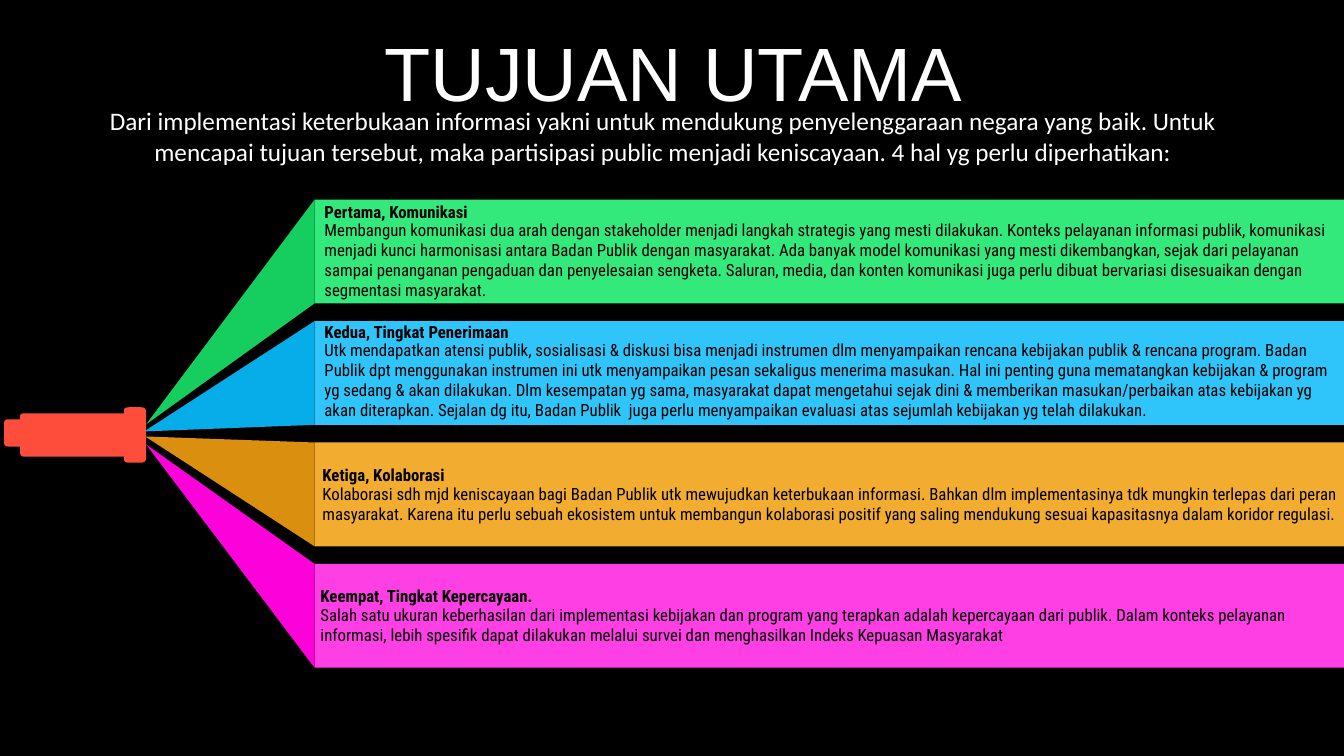
from math import dist

from pptx import Presentation
from pptx.dml.color import RGBColor as RGB
from pptx.enum.shapes import MSO_SHAPE as Shape
from pptx.enum.text import MSO_ANCHOR as Anchor, PP_ALIGN as Align
from pptx.util import Inches, Pt

HUES = {
    "black": "000000", "white": "FFFFFF", "torch": "FE4D3B",
    "green": "33E97C", "dark green": "16CD60",
    "blue": "2FC5FA", "dark blue": "06ADE8",
    "gold": "F2AC30", "dark gold": "DA900E",
    "pink": "FE3FE4", "dark pink": "FC01DA",
}
LEFT, TOP, HIGH, STEP = 3.12, 1.98, 1.03, 1.205

# hue, beam tip, text left, heading top, body top, body height, heading, body
GOALS = [
    ("green", (1.45, 4.21), 3.12, 1.95, 2.13, 0.91, "Pertama, Komunikasi",
     "Membangun komunikasi dua arah dengan stakeholder menjadi langkah strategis yang mesti "
     "dilakukan. Konteks pelayanan informasi publik, komunikasi menjadi kunci harmonisasi antara "
     "Badan Publik dengan masyarakat. Ada banyak model komunikasi yang mesti dikembangkan, sejak "
     "dari pelayanan sampai penanganan pengaduan dan penyelesaian sengketa. Saluran, media, dan "
     "konten komunikasi juga perlu dibuat bervariasi disesuaikan dengan segmentasi masyarakat."),
    ("blue", (1.43, 4.28), 3.12, 3.14, 3.32, 0.91, "Kedua, Tingkat Penerimaan",
     "Utk mendapatkan atensi publik, sosialisasi & diskusi bisa menjadi instrumen dlm "
     "menyampaikan rencana kebijakan publik & rencana program. Badan Publik dpt menggunakan "
     "instrumen ini utk menyampaikan pesan sekaligus menerima masukan. Hal ini penting guna "
     "mematangkan kebijakan & program yg sedang & akan dilakukan. Dlm kesempatan yg sama, "
     "masyarakat dapat mengetahui sejak dini & memberikan masukan/perbaikan atas kebijakan yg "
     "akan diterapkan. Sejalan dg itu, Badan Publik  juga perlu menyampaikan evaluasi atas "
     "sejumlah kebijakan yg telah dilakukan."),
    ("gold", (1.44, 4.33), 3.1, 4.56, 4.75, 0.5, "Ketiga, Kolaborasi",
     "Kolaborasi sdh mjd keniscayaan bagi Badan Publik utk mewujudkan keterbukaan informasi. "
     "Bahkan dlm implementasinya tdk mungkin terlepas dari peran masyarakat. Karena itu perlu "
     "sebuah ekosistem untuk membangun kolaborasi positif yang saling mendukung sesuai "
     "kapasitasnya dalam koridor regulasi."),
    ("pink", (1.45, 4.41), 3.08, 5.76, 5.95, 0.5, "Keempat, Tingkat Kepercayaan.",
     "Salah satu ukuran keberhasilan dari implementasi kebijakan dan program yang terapkan adalah "
     "kepercayaan dari publik. Dalam konteks pelayanan informasi, lebih spesifik dapat dilakukan "
     "melalui survei dan menghasilkan Indeks Kepuasan Masyarakat"),
]

# x, y, corner radius
TORCH = [
    (1.23, 4.04, 0.05), (1.45, 4.04, 0.05), (1.45, 4.59, 0.05), (1.23, 4.59, 0.05),
    (1.23, 4.53, 0), (0.2, 4.53, 0.04), (0.2, 4.43, 0), (0.04, 4.43, 0.04),
    (0.04, 4.16, 0.04), (0.2, 4.16, 0), (0.2, 4.1, 0.04), (1.23, 4.1, 0),
]


def smooth(nodes, steps=6):
    """Return outline points with each corner bent along a quadratic curve."""
    points = []
    for i, (x, y, r) in enumerate(nodes):
        if not r:
            points.append((x, y))
            continue
        ends = []
        for px, py, _ in (nodes[i - 1], nodes[(i + 1) % len(nodes)]):
            part = min(r / dist((x, y), (px, py)), 0.5)
            ends.append((x + (px - x) * part, y + (py - y) * part))
        (ax, ay), (bx, by) = ends
        for n in range(steps + 1):
            t = n / steps
            u = 1 - t
            points.append((u * u * ax + 2 * u * t * x + t * t * bx,
                           u * u * ay + 2 * u * t * y + t * t * by))
    return points


class Deck:
    def __init__(self):
        self.show = Presentation()
        self.show.slide_width, self.show.slide_height = Inches(13.33), Inches(7.5)
        self.slide = self.show.slides.add_slide(self.show.slide_layouts[5])
        self.paint(self.slide.background.fill, "black")

    def paint(self, fill, hue):
        fill.solid()
        fill.fore_color.rgb = RGB.from_string(HUES[hue])

    def plain(self, shape, hue):
        self.paint(shape.fill, hue)
        shape.line.fill.background()
        shape.shadow.inherit = False

    def words(self, frame, text, size, font, hue, bold=False, align=Align.LEFT):
        """Fill the first paragraph of the frame with one styled run."""
        frame.word_wrap = True
        para = frame.paragraphs[0]
        para.alignment = align
        run = para.add_run()
        run.text = text
        run.font.size, run.font.name, run.font.bold = Pt(size), font, bold
        run.font.color.rgb = RGB.from_string(HUES[hue])
        return para

    def title(self, box, text):
        head = self.slide.shapes.title
        head.left, head.top, head.width, head.height = map(Inches, box)
        head.text_frame.vertical_anchor = Anchor.MIDDLE
        para = self.words(head.text_frame, text, 54, "Arial", "white", align=Align.CENTER)
        para.line_spacing, para.space_before = 0.9, Pt(10)

    def text(self, box, *args, **style):
        area = self.slide.shapes.add_textbox(*map(Inches, box))
        self.words(area.text_frame, *args, **style)

    def band(self, box, hue):
        self.plain(self.slide.shapes.add_shape(Shape.RECTANGLE, *map(Inches, box)), hue)

    def outline(self, points, hue):
        first, *rest = [(Inches(x), Inches(y)) for x, y in points]
        pen = self.slide.shapes.build_freeform(*first)
        pen.add_line_segments(rest, close=True)
        self.plain(pen.convert_to_shape(), hue)


def main():
    deck = Deck()
    deck.title((0.35, 0.37, 12.66, 0.79), "TUJUAN UTAMA")
    deck.text((0.75, 1, 11.65, 0.71),
              "Dari implementasi keterbukaan informasi yakni untuk mendukung penyelenggaraan "
              "negara yang baik. Untuk mencapai tujuan tersebut, maka partisipasi public menjadi "
              "keniscayaan. 4 hal yg perlu diperhatikan:",
              18, "Calibri", "white", align=Align.CENTER)
    for i, (hue, tip, left, head, top, high, name, body) in enumerate(GOALS):
        y = TOP + i * STEP
        deck.band((LEFT, y, 13.33 - LEFT, HIGH), hue)
        deck.outline([tip, (LEFT, y), (LEFT, y + HIGH)], "dark " + hue)
        deck.text((left, top, 10.3, high), body, 12, "Roboto Condensed", "black")
        deck.text((left, head, 10.3, 0.3), name, 12, "Roboto Condensed", "black", bold=True)
    deck.outline(smooth(TORCH), "torch")
    deck.show.save("out.pptx")


if __name__ == "__main__":
    main()
